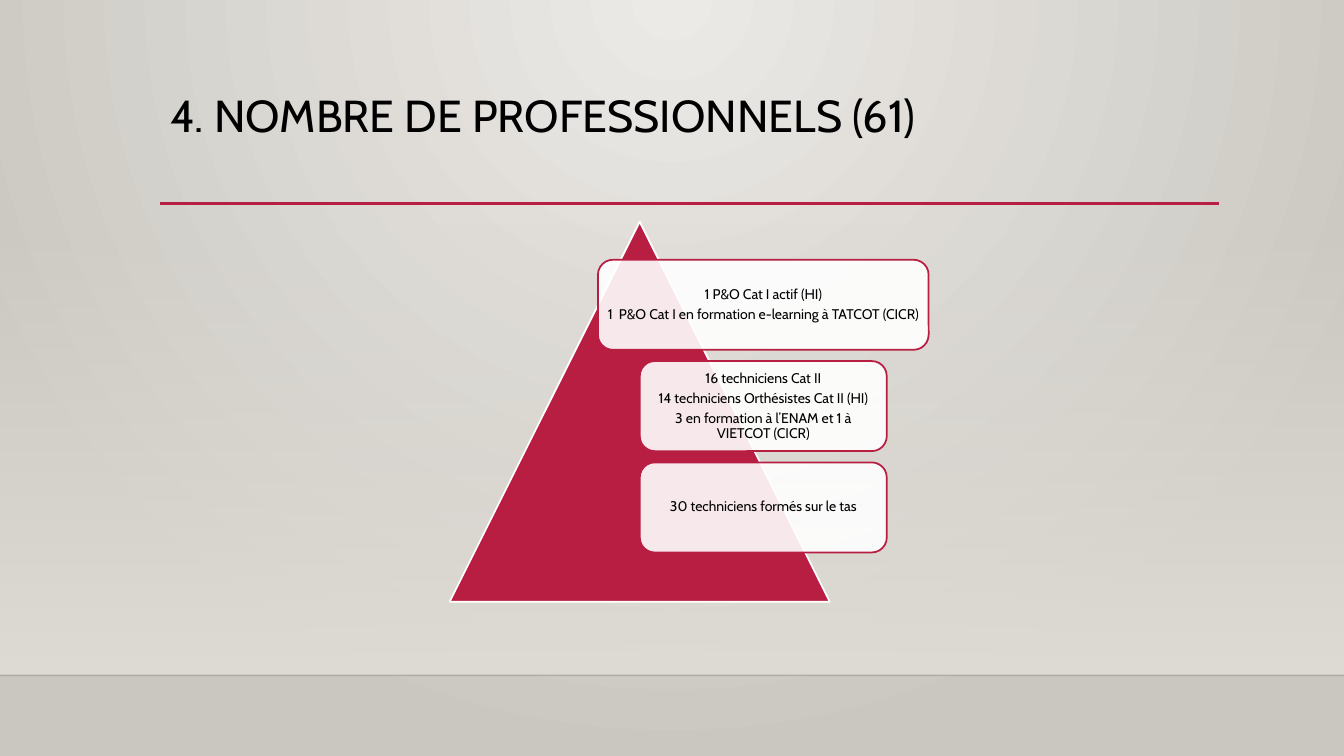
from pptx import Presentation
from pptx.dml.color import RGBColor
from pptx.enum import shapes, text
from pptx.oxml import parse_xml
from pptx.oxml.ns import nsdecls, qn
from pptx.util import Inches, Pt

RED = RGBColor(0xB7, 0x1E, 0x42)
WHITE = RGBColor(0xFF, 0xFF, 0xFF)
BLACK = RGBColor(0, 0, 0)
LIGHT = RGBColor(0xEC, 0xEA, 0xE7)
GREY = RGBColor(0xCA, 0xC7, 0xC1)
WALL = RGBColor(0xDF, 0xDB, 0xD5)

WIDTH, HEIGHT = 13.33, 7.5
FLOOR = 6.7
FONT = "Cabin"

# Width and lines of each box, from the tip down
LEVELS = [
    (3.28, ["1 P&O Cat I actif (HI)",
            "1  P&O Cat I en formation e-learning à TATCOT (CICR)"]),
    (2.45, ["16 techniciens Cat II",
            "14 techniciens Orthésistes Cat II (HI)",
            "3 en formation à l’ENAM et 1 à VIETCOT (CICR)"]),
    (2.45, ["30 techniciens formés sur le tas"]),
]


def assign(item, values):
    for name, value in values.items():
        setattr(item, name, value)


def fade(node, percent):
    """Set the opacity of the first colour found in a node."""
    color = next(node.iter(qn("a:srgbClr")))
    color.append(parse_xml(
        f'<a:alpha {nsdecls("a")} val="{percent * 1000}"/>'))


def blend(fill, first, last):
    fill.gradient()
    for stop, color in zip(fill.gradient_stops, (first, last)):
        stop.color.rgb = color


def add_rule(slide, left, top, width, color, weight):
    rule = slide.shapes.add_connector(
        shapes.MSO_CONNECTOR.STRAIGHT, Inches(left), Inches(top),
        Inches(left + width), Inches(top))
    rule.line.color.rgb = color
    rule.line.width = Pt(weight)
    rule._element.spPr.append(parse_xml(f'<a:effectLst {nsdecls("a")}/>'))
    return rule


def add_shape(slide, kind, left, top, width, height):
    shape = slide.shapes.add_shape(
        kind, Inches(left), Inches(top), Inches(width), Inches(height))
    shape.shadow.inherit = False
    return shape


def add_solid(slide, kind, box, fill, line):
    shape = add_shape(slide, kind, *box)
    shape.fill.solid()
    shape.fill.fore_color.rgb = fill
    shape.line.color.rgb = line
    shape.line.width = Pt(1.25)
    return shape


def add_backdrop(slide):
    # Radial light from the top
    blend(slide.background.fill, LIGHT, GREY)
    lin = next(slide._element.iter(qn("a:lin")))
    lin.getparent().replace(lin, parse_xml(
        f'<a:path {nsdecls("a")} path="circle">'
        '<a:fillToRect l="43000" t="0" r="43000" b="100000"/></a:path>'))

    # Wall that fades in down to the floor line
    wall = add_shape(slide, shapes.MSO_SHAPE.RECTANGLE,
                     0, 2.21, WIDTH, FLOOR - 2.21)
    blend(wall.fill, WALL, WALL)
    wall.fill.gradient_angle = 270
    fade(wall._element.spPr, 0)
    wall.line.fill.background()
    edge = add_rule(slide, 0, FLOOR, WIDTH, BLACK, 1)
    fade(edge._element.spPr, 20)


def add_title(slide, left, top, width, height):
    title = slide.shapes.title
    assign(title, {"left": Inches(left), "top": Inches(top),
                   "width": Inches(width), "height": Inches(height)})
    frame = title.text_frame
    frame.text = "4. NOMBRE DE PROFESSIONNELS (61)"
    assign(frame, {"vertical_anchor": text.MSO_ANCHOR.TOP, "word_wrap": True,
                   "auto_size": text.MSO_AUTO_SIZE.NONE})
    para = frame.paragraphs[0]
    assign(para, {"alignment": text.PP_ALIGN.LEFT, "line_spacing": 0.9})
    assign(para.font, {"name": FONT, "size": Pt(32)})
    para.font.color.rgb = BLACK
    add_rule(slide, left, top + height - 0.01, width, RED, 2.5)


def add_level(slide, box, lines):
    shape = add_solid(slide, shapes.MSO_SHAPE.ROUNDED_RECTANGLE,
                      box, WHITE, RED)
    fade(shape._element.spPr, 90)
    frame = shape.text_frame
    frame.text = "\n".join(lines)
    assign(frame, {"word_wrap": True,
                   "vertical_anchor": text.MSO_ANCHOR.MIDDLE})
    assign(frame, {f"margin_{side}": Inches(0.03)
                   for side in ("left", "right", "top", "bottom")})
    for para in frame.paragraphs:
        assign(para, {"alignment": text.PP_ALIGN.CENTER,
                      "line_spacing": 0.9, "space_after": Pt(3.5)})
        assign(para.font, {"name": FONT, "size": Pt(10)})
        para.font.color.rgb = BLACK


def add_pyramid(slide, left, top, size):
    add_solid(slide, shapes.MSO_SHAPE.ISOSCELES_TRIANGLE,
              (left, top, size, size), RED, WHITE)
    # Boxes share one centre line and an even pitch
    center = left + size * 0.825
    pitch = size * 4 / 15
    for row, (width, lines) in enumerate(LEVELS):
        box = (center - width / 2, top + size / 10 + row * pitch,
               width, pitch * 8 / 9)
        add_level(slide, box, lines)


def main():
    deck = Presentation()
    assign(deck, {"slide_width": Inches(WIDTH),
                  "slide_height": Inches(HEIGHT)})
    slide = deck.slides.add_slide(deck.slide_layouts[5])
    add_backdrop(slide)
    add_title(slide, 1.59, 0.88, 10.5, 1.15)
    add_pyramid(slide, 4.46, 2.2, 3.77)
    deck.save("out.pptx")


if __name__ == "__main__":
    main()
